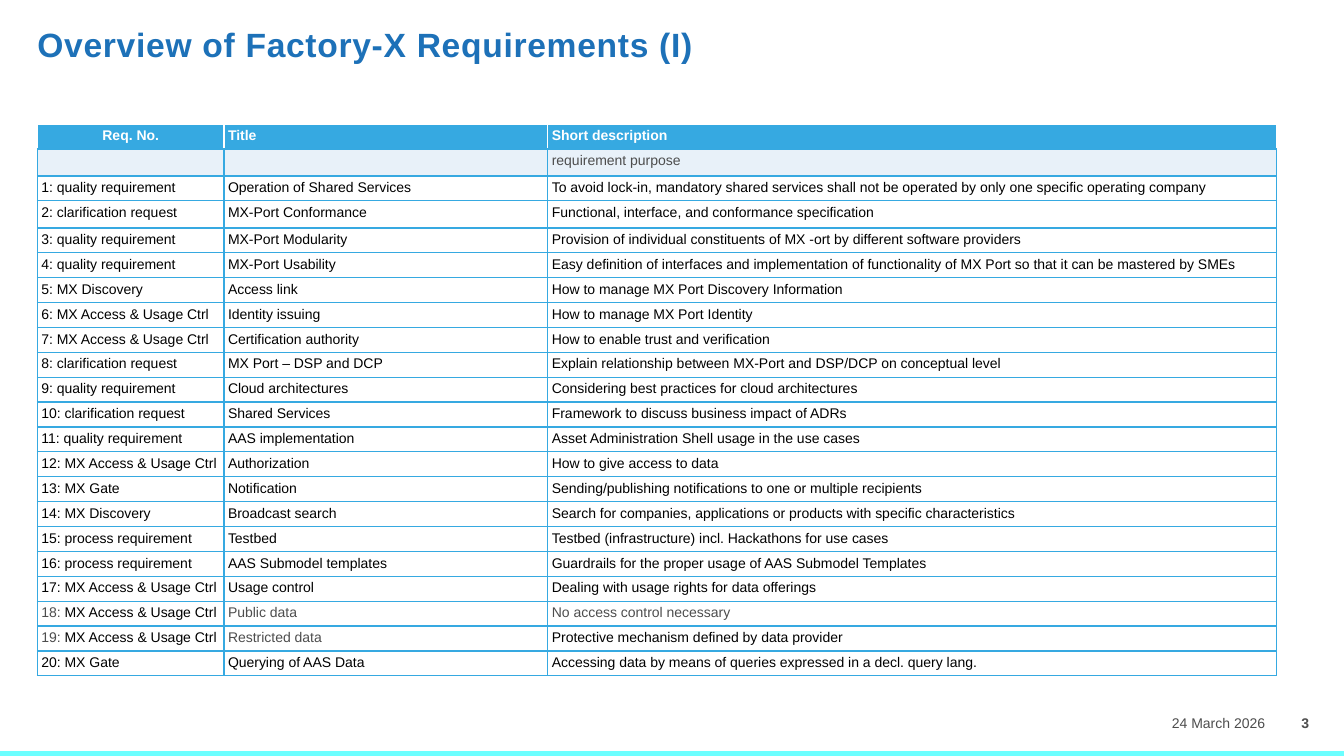
import pptx
import pptx.dml.color
import pptx.enum.shapes
import pptx.enum.text
import pptx.oxml.ns
import pptx.util
from lxml import etree

SLIDE_WIDTH, SLIDE_HEIGHT = pptx.util.Inches(13.33), pptx.util.Inches(7.5)
UNIT = SLIDE_WIDTH / 144
FONT = "Arial"
TITLE_BLUE, SKY, PALE, AQUA = "1D71B8", "36A9E1", "E8F1F9", "6CFFFF"
WHITE, BLACK, GREY = "FFFFFF", "000000", "4D4D4D"
LEFT = pptx.enum.text.PP_ALIGN.LEFT
CENTER = pptx.enum.text.PP_ALIGN.CENTER
RIGHT = pptx.enum.text.PP_ALIGN.RIGHT

QUALITY, CLARIFICATION, PROCESS = "quality requirement", "clarification request", "process requirement"
DISCOVERY, ACCESS, GATE = "MX Discovery", "MX Access & Usage Ctrl", "MX Gate"
HEADERS = ["Req. No.", "Title", "Short description"]
PURPOSE = ["", "", "requirement purpose"]
REQUIREMENTS = [
    (QUALITY, "Operation of Shared Services",
     "To avoid lock-in, mandatory shared services shall not be operated by only one specific operating company"),
    (CLARIFICATION, "MX-Port Conformance", "Functional, interface, and conformance specification"),
    (QUALITY, "MX-Port Modularity",
     "Provision of individual constituents of MX -ort by different software providers"),
    (QUALITY, "MX-Port Usability",
     "Easy definition of interfaces and implementation of functionality of MX Port so that it can be mastered by SMEs"),
    (DISCOVERY, "Access link", "How to manage MX Port Discovery Information"),
    (ACCESS, "Identity issuing", "How to manage MX Port Identity"),
    (ACCESS, "Certification authority", "How to enable trust and verification"),
    (CLARIFICATION, "MX Port – DSP and DCP",
     "Explain relationship between MX-Port and DSP/DCP on conceptual level"),
    (QUALITY, "Cloud architectures", "Considering best practices for cloud architectures"),
    (CLARIFICATION, "Shared Services", "Framework to discuss business impact of ADRs"),
    (QUALITY, "AAS implementation", "Asset Administration Shell usage in the use cases"),
    (ACCESS, "Authorization", "How to give access to data"),
    (GATE, "Notification", "Sending/publishing notifications to one or multiple recipients"),
    (DISCOVERY, "Broadcast search",
     "Search for companies, applications or products with specific characteristics"),
    (PROCESS, "Testbed", "Testbed (infrastructure) incl. Hackathons for use cases"),
    (PROCESS, "AAS Submodel templates", "Guardrails for the proper usage of AAS Submodel Templates"),
    (ACCESS, "Usage control", "Dealing with usage rights for data offerings"),
    (ACCESS, "Public data", "No access control necessary"),
    (ACCESS, "Restricted data", "Protective mechanism defined by data provider"),
    (GATE, "Querying of AAS Data", "Accessing data by means of queries expressed in a decl. query lang."),
]
MUTED = {"18: ", "19: ", "Public data", "No access control necessary", "Restricted data"}
COLUMNS = [20, 34.7, 78.1]
ROW, TALL_ROW = 2.5, 2.9
TALL_ROWS = {1, 3}


def units(count):
    return pptx.util.Emu(round(count * UNIT))


def color(hex_string):
    return pptx.dml.color.RGBColor.from_string(hex_string)


def style(span, size, hex_string, bold=False):
    span.font.name = FONT
    span.font.size = pptx.util.Pt(size)
    span.font.bold = bold
    span.font.color.rgb = color(hex_string)


def set_margins(holder, margin):
    holder.margin_left = holder.margin_right = margin
    holder.margin_top = holder.margin_bottom = margin


def add_title(page, box, text):
    title = page.shapes.title
    title.left, title.top, title.width, title.height = map(units, box)
    frame = title.text_frame
    frame.text = text
    frame.word_wrap = True
    frame.auto_size = pptx.enum.text.MSO_AUTO_SIZE.NONE
    frame.vertical_anchor = pptx.enum.text.MSO_ANCHOR.TOP
    set_margins(frame, 0)
    para = frame.paragraphs[0]
    para.alignment = LEFT
    para.line_spacing = 0.9
    span = para.runs[0]
    style(span, 24, TITLE_BLUE, True)
    span.font._element.set("spc", "50")


def add_label(page, box, text, alignment, bold=False):
    frame = page.shapes.add_textbox(*map(units, box)).text_frame
    frame.text = text
    frame.word_wrap = True
    frame.vertical_anchor = pptx.enum.text.MSO_ANCHOR.MIDDLE
    para = frame.paragraphs[0]
    para.alignment = alignment
    style(para.runs[0], 10, GREY, bold)


def add_footer(page, box):
    left, top, width, height = box
    number_width = 5.7
    date_width = width - number_width - 0.4
    add_label(page, (left, top, date_width, height), "24 March 2026", RIGHT)
    add_label(page, (left + width - number_width, top, number_width, height), "3", CENTER, True)
    baseline = units(80.8)
    line = page.shapes.add_connector(
        pptx.enum.shapes.MSO_CONNECTOR.STRAIGHT, 0, baseline, SLIDE_WIDTH, baseline)
    line.line.color.rgb = color(AQUA)
    line.line.width = pptx.util.Pt(4.5)
    etree.SubElement(line._element.spPr, pptx.oxml.ns.qn("a:effectLst"))


def add_borders(cell, side_color, bottom_color):
    properties = cell._tc.get_or_add_tcPr()
    for side, hex_string in zip("LRTB", [side_color] * 3 + [bottom_color]):
        line = etree.SubElement(properties, pptx.oxml.ns.qn(f"a:ln{side}"), w="12700")
        fill = etree.SubElement(line, pptx.oxml.ns.qn("a:solidFill"))
        etree.SubElement(fill, pptx.oxml.ns.qn("a:srgbClr"), val=hex_string)


def fill_cell(cell, parts, fill, text_color, header=False):
    add_borders(cell, WHITE if header else SKY, SKY)
    cell.fill.solid()
    cell.fill.fore_color.rgb = color(fill)
    set_margins(cell, pptx.util.Inches(0.04))
    para = cell.text_frame.paragraphs[0]
    for part in filter(None, parts):
        span = para.add_run()
        span.text = part
        style(span, 10, GREY if part in MUTED else text_color, header)
    if not para.runs:
        etree.SubElement(para._p, pptx.oxml.ns.qn("a:endParaRPr"), sz="1000")


def add_requirements(page, box):
    body = [([f"{number}: ", kind], [title], [description])
            for number, (kind, title, description) in enumerate(REQUIREMENTS, 1)]
    rows = [[[text] for text in HEADERS], [[text] for text in PURPOSE]] + body
    table = page.shapes.add_table(len(rows), len(COLUMNS), *map(units, box)).table
    for column, width in zip(table.columns, COLUMNS):
        column.width = units(width)
    looks = [(SKY, WHITE, True), (PALE, GREY)] + [(WHITE, BLACK)] * len(body)
    for index, (row, look) in enumerate(zip(rows, looks)):
        table.rows[index].height = units(TALL_ROW if index in TALL_ROWS else ROW)
        for position, parts in enumerate(row):
            fill_cell(table.cell(index, position), parts, *look)
    table.cell(0, 0).text_frame.paragraphs[0].alignment = CENTER


def main():
    deck = pptx.Presentation()
    deck.slide_width, deck.slide_height = SLIDE_WIDTH, SLIDE_HEIGHT
    page = deck.slides.add_slide(deck.slide_layouts[5])
    add_title(page, (4, 3, 114.8, 8.5), "Overview of Factory-X Requirements (I)")
    add_footer(page, (115.3, 75.4, 27.4, 4.1))
    add_requirements(page, (4, 13.3, sum(COLUMNS), 56.5))
    deck.save("out.pptx")


if __name__ == "__main__":
    main()
